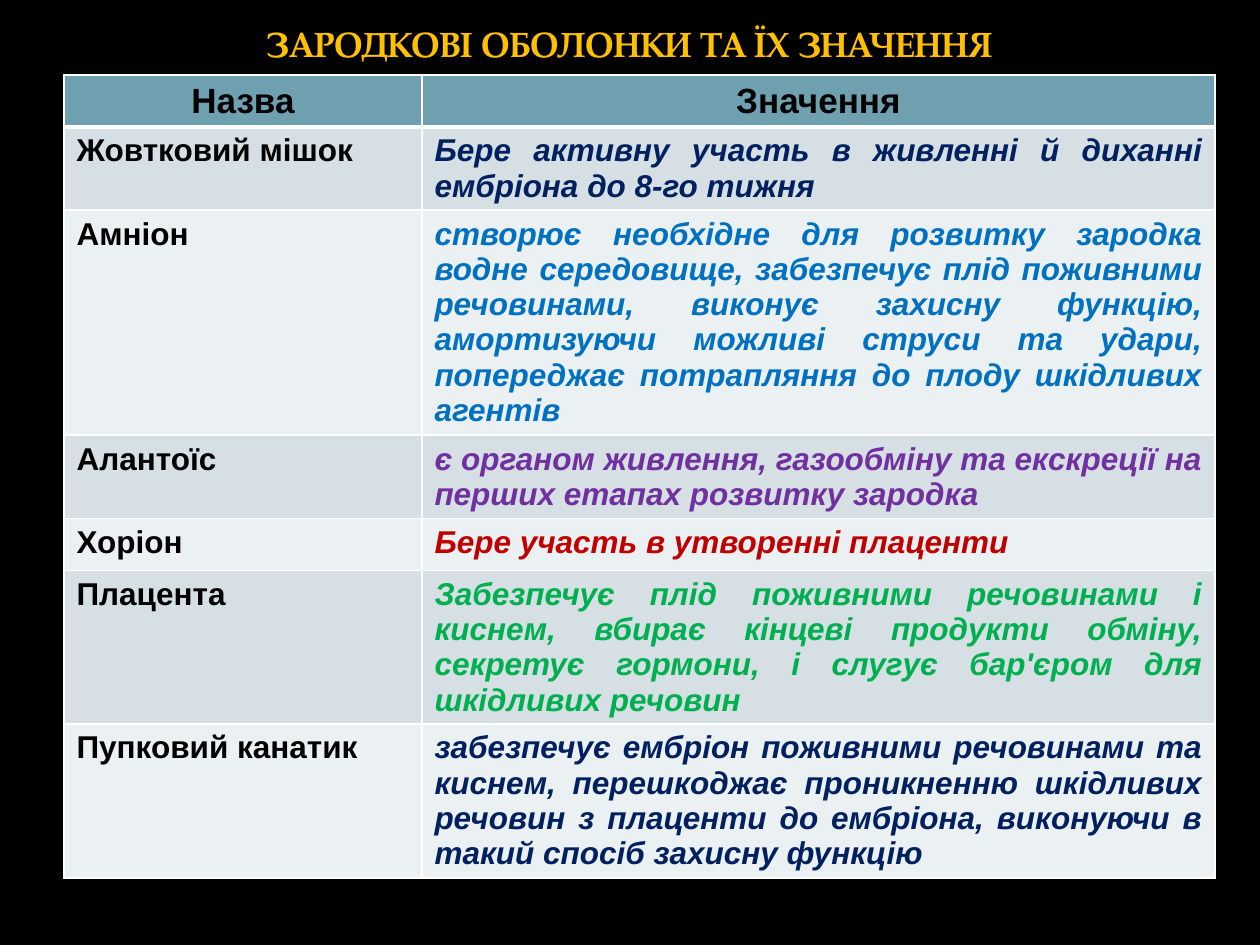
from lxml import etree
from pptx import Presentation
from pptx.dml.color import RGBColor
from pptx.enum.text import MSO_ANCHOR, MSO_AUTO_SIZE, PP_ALIGN
from pptx.oxml.ns import qn
from pptx.util import Emu, Pt

CENTER, JUSTIFY = PP_ALIGN.CENTER, PP_ALIGN.JUSTIFY
TOP = MSO_ANCHOR.TOP
NO_AUTOFIT = MSO_AUTO_SIZE.NONE
TITLE_ONLY = 5
EMU_PER_PX = 914400 / 126
EMU_PER_PT = 12700

COLORS = {
    "background": "000000", "title": "FFC000", "text": "000000",
    "border": "FFFFFF", "header": "6EA0B0", "odd": "D5DFE4", "even": "EBF0F2",
    "navy": "002060", "blue": "0070C0", "purple": "7030A0",
    "red": "C00000", "green": "00B050",
}

TITLE = "ЗАРОДКОВІ ОБОЛОНКИ ТА ЇХ ЗНАЧЕННЯ"
HEADINGS = ("Назва", "Значення")
HEADER_HEIGHT = 52
COLUMN_WIDTHS = (358, 793)
# name, meaning, colour of the meaning, row height in px
MEMBRANES = [
    ("Жовтковий мішок",
     "Бере активну участь в живленні й диханні ембріона до 8-го тижня",
     "navy", 83),
    ("Амніон",
     "створює необхідне для розвитку зародка водне середовище, забезпечує плід "
     "поживними речовинами, виконує захисну функцію, амортизуючи можливі струси "
     "та удари, попереджає потрапляння до плоду шкідливих агентів",
     "blue", 225),
    ("Алантоїс",
     "є органом живлення, газообміну та екскреції на перших етапах розвитку зародка",
     "purple", 83),
    ("Хоріон", "Бере участь в утворенні плаценти", "red", 52),
    ("Плацента",
     "Забезпечує плід поживними речовинами і киснем, вбирає кінцеві продукти "
     "обміну, секретує гормони, і слугує бар'єром для шкідливих речовин",
     "green", 153),
    ("Пупковий канатик",
     "забезпечує ембріон поживними речовинами та киснем, перешкоджає проникненню "
     "шкідливих речовин з плаценти до ембріона, виконуючи в такий спосіб захисну "
     "функцію",
     "navy", 153),
]


def px(length):
    return Emu(round(length * EMU_PER_PX))


def rgb(name):
    return RGBColor.from_string(COLORS[name])


def write(frame, text, size=18, font="Arial", color="text", italic=False,
          align=JUSTIFY):
    paragraph = frame.paragraphs[0]
    paragraph.alignment = align
    run = paragraph.add_run()
    run.text = text
    run.font.size = Pt(size)
    run.font.name = font
    run.font.bold = True
    run.font.italic = italic
    run.font.color.rgb = rgb(color)


def set_borders(cell, top=1, bottom=1):
    """Draw all four cell borders; top and bottom widths are in points."""
    properties = cell._tc.get_or_add_tcPr()
    widths = {"a:lnL": 1, "a:lnR": 1, "a:lnT": top, "a:lnB": bottom}
    for position, (tag, width) in enumerate(widths.items()):
        line = etree.Element(qn(tag), w=str(width * EMU_PER_PT))
        fill = etree.SubElement(line, qn("a:solidFill"))
        etree.SubElement(fill, qn("a:srgbClr"), val=COLORS["border"])
        properties.insert(position, line)


def fill_cell(cell, text, fill, top=1, bottom=1, **text_format):
    cell.fill.solid()
    cell.fill.fore_color.rgb = rgb(fill)
    set_borders(cell, top, bottom)
    write(cell.text_frame, text, **text_format)


def place_title(slide, left, top, width, height):
    title = slide.shapes.title
    title.left, title.top = px(left), px(top)
    title.width, title.height = px(width), px(height)
    frame = title.text_frame
    frame.auto_size = NO_AUTOFIT
    frame.vertical_anchor = TOP
    write(frame, TITLE, size=20, font="TeX Gyre Pagella", color="title",
          align=CENTER)


def place_membrane_table(slide, left, top):
    heights = [HEADER_HEIGHT] + [membrane[-1] for membrane in MEMBRANES]
    table = slide.shapes.add_table(
        len(heights), len(COLUMN_WIDTHS), px(left), px(top),
        px(sum(COLUMN_WIDTHS)), px(sum(heights))).table
    for column, width in zip(table.columns, COLUMN_WIDTHS):
        column.width = px(width)
    for row, height in zip(table.rows, heights):
        row.height = px(height)

    for column, heading in enumerate(HEADINGS):
        fill_cell(table.cell(0, column), heading, "header", bottom=3,
                  size=20, align=CENTER)
    for row, (name, meaning, color, _) in enumerate(MEMBRANES, start=1):
        band = "odd" if row % 2 else "even"
        top_border = 3 if row == 1 else 1
        fill_cell(table.cell(row, 0), name, band, top=top_border)
        fill_cell(table.cell(row, 1), meaning, band, top=top_border,
                  color=color, italic=True)


def main():
    presentation = Presentation()
    presentation.slide_width, presentation.slide_height = px(1260), px(945)
    slide = presentation.slides.add_slide(presentation.slide_layouts[TITLE_ONLY])
    slide.background.fill.solid()
    slide.background.fill.fore_color.rgb = rgb("background")
    place_title(slide, left=44, top=16, width=1171, height=58)
    place_membrane_table(slide, left=64, top=75)
    presentation.save("out.pptx")


if __name__ == "__main__":
    main()
